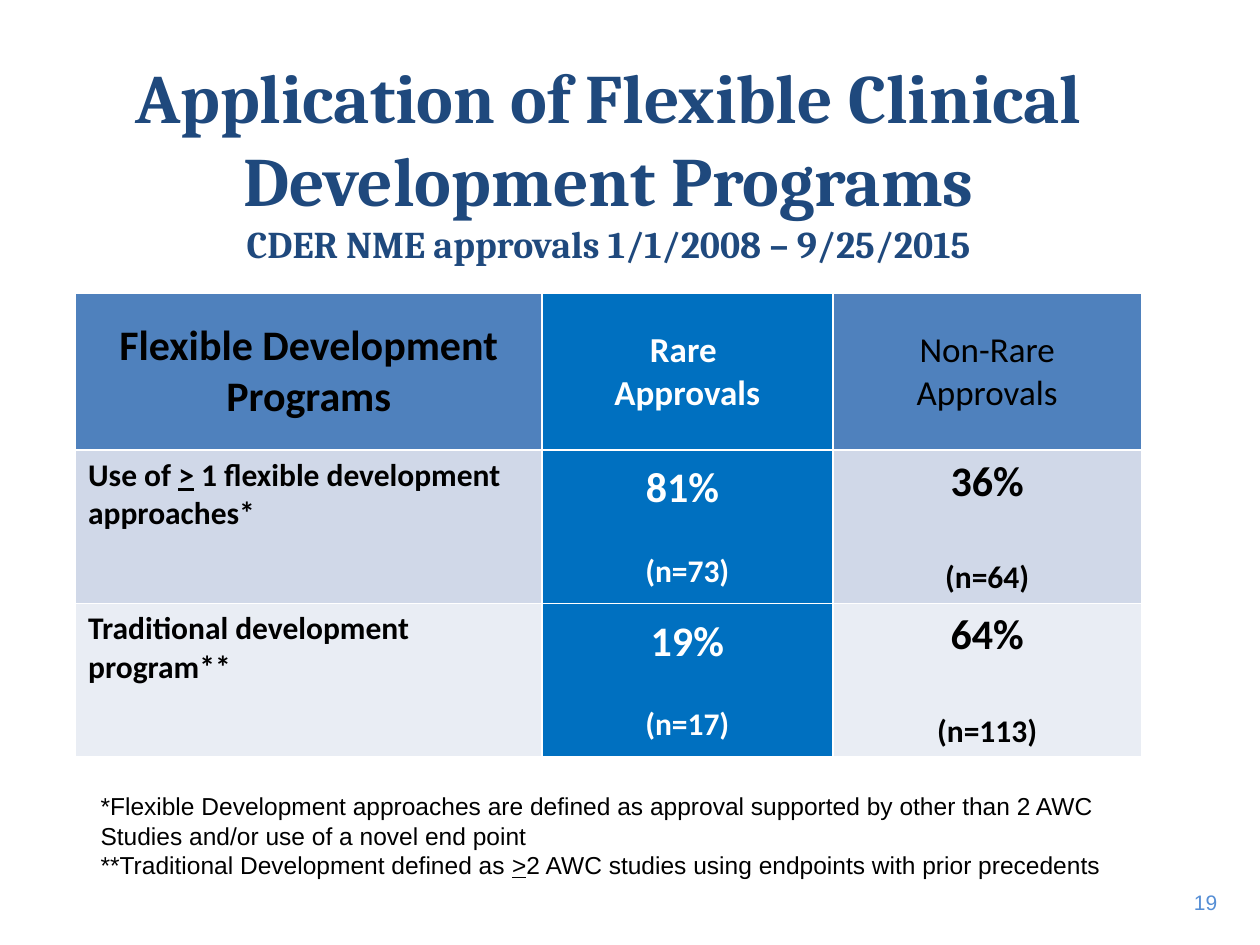
"""Build the slide on flexible clinical development programs."""
import dataclasses

import lxml.etree
import pptx
import pptx.dml.color
import pptx.enum.text
import pptx.oxml.ns
import pptx.util

Inches = pptx.util.Inches
Align = pptx.enum.text.PP_ALIGN
Anchor = pptx.enum.text.MSO_ANCHOR


@dataclasses.dataclass(frozen=True)
class Theme:
    title_font: str = "Cambria"
    table_font: str = "Calibri"
    note_font: str = "Arial"
    navy: str = "1F497D"
    black: str = "000000"
    white: str = "FFFFFF"
    header: str = "4F81BD"
    highlight: str = "0070C0"
    bands: tuple = ("D0D8E8", "E9EDF4")
    page_number: str = "558ED5"
    title_size: float = 39.6
    subtitle_size: float = 21.6
    large: float = 24
    medium: float = 20
    body: float = 18
    note: float = 14
    small: float = 12


def rgb(color):
    return pptx.dml.color.RGBColor.from_string(color)


def write(frame, text, font, size, color, bold=False, align=Align.LEFT, before=0):
    """Write one paragraph, underlining each greater-than sign."""
    paragraph = frame.paragraphs[0]
    if paragraph.runs:
        paragraph = frame.add_paragraph()
    paragraph.alignment = align
    if before:
        paragraph.space_before = pptx.util.Pt(before)
    for piece in text.replace(">", "|>|").split("|"):
        run = paragraph.add_run()
        run.text = piece
        run.font.name = font
        run.font.size = pptx.util.Pt(size)
        run.font.color.rgb = rgb(color)
        run.font.bold = bold
        run.font.underline = piece == ">"
    return paragraph


class SlideBuilder:
    """Hold the theme and the slide, and add each kind of element."""

    def __init__(self, slide, theme):
        self.slide = slide
        self.theme = theme

    def text_box(self, left, top, width, height, anchor=Anchor.TOP, wrap=True):
        shape = self.slide.shapes.add_textbox(
            Inches(left), Inches(top), Inches(width), Inches(height))
        frame = shape.text_frame
        frame.word_wrap = wrap
        frame.vertical_anchor = anchor
        return frame

    def title(self, text, subtitle):
        theme = self.theme
        frame = self.text_box(0.33, 0.91, 9, 0.72, anchor=Anchor.MIDDLE)
        for line, size in ((text, theme.title_size), (subtitle, theme.subtitle_size)):
            write(frame, line, theme.title_font, size, theme.navy,
                  bold=True, align=Align.CENTER)

    def notes(self, lines):
        frame = self.text_box(0.7, 6.23, 8.74, 0.81)
        for line in lines:
            write(frame, line, self.theme.note_font, self.theme.note, self.theme.black)

    def page_number(self, number):
        frame = self.text_box(9.35, 7.01, 0.41, 0.3, wrap=False)
        write(frame, number, self.theme.note_font, self.theme.small,
              self.theme.page_number, align=Align.RIGHT)

    def table(self, left, top, widths, heights):
        table = self.slide.shapes.add_table(
            len(heights), len(widths), Inches(left), Inches(top),
            Inches(sum(widths)), Inches(sum(heights))).table
        for column, width in zip(table.columns, widths):
            column.width = Inches(width)
        for row, height in zip(table.rows, heights):
            row.height = Inches(height)
        return table

    def cell(self, cell, fill, lines, color, bold=True, align=Align.CENTER,
             anchor=Anchor.MIDDLE):
        """Fill a cell with lines given as text, size and space before."""
        properties = cell._tc.get_or_add_tcPr()
        for side in ("lnL", "lnR", "lnT", "lnB"):
            line = lxml.etree.SubElement(
                properties, pptx.oxml.ns.qn(f"a:{side}"), w=str(pptx.util.Pt(1)))
            solid = lxml.etree.SubElement(line, pptx.oxml.ns.qn("a:solidFill"))
            lxml.etree.SubElement(
                solid, pptx.oxml.ns.qn("a:srgbClr"), val=self.theme.white)
        cell.fill.solid()
        cell.fill.fore_color.rgb = rgb(fill)
        cell.vertical_anchor = anchor
        for text, size, before in lines:
            write(cell.text_frame, text, self.theme.table_font, size, color,
                  bold=bold, align=align, before=before)

    def approvals_table(self, rows):
        theme = self.theme
        table = self.table(0.6, 2.33, (3.7, 2.31, 2.45), (1.24, 1.22, 1.22))
        self.cell(table.cell(0, 0), theme.header,
                  [("Flexible Development Programs", theme.large, 0)], theme.black)
        self.cell(table.cell(0, 1), theme.highlight,
                  [("Rare ", theme.medium, 0), ("Approvals", theme.medium, 0)],
                  theme.white)
        self.cell(table.cell(0, 2), theme.header,
                  [("Non-Rare Approvals", theme.medium, 0)], theme.black, bold=False)
        for index, (label, rare, common) in enumerate(rows, start=1):
            band = theme.bands[index - 1]
            self.cell(table.cell(index, 0), band, [(label, theme.body, 0)],
                      theme.black, align=Align.LEFT, anchor=Anchor.TOP)
            columns = ((rare, theme.highlight, theme.white, 22),
                       (common, band, theme.black, 29))
            for column, (values, fill, color, gap) in enumerate(columns, start=1):
                share, count = values
                self.cell(table.cell(index, column), fill,
                          [(share, theme.large, 0), (count, theme.body, gap)], color)


def main():
    presentation = pptx.Presentation()
    presentation.slide_width = Inches(10)
    presentation.slide_height = Inches(7.5)
    slide = presentation.slides.add_slide(presentation.slide_layouts[6])
    builder = SlideBuilder(slide, Theme())
    builder.page_number("19")
    builder.title("Application of Flexible Clinical Development Programs",
                  "CDER NME approvals 1/1/2008 – 9/25/2015")
    builder.approvals_table([
        ("Use of > 1 flexible development approaches*",
         ("81% ", "(n=73)"), ("36%", "(n=64)")),
        ("Traditional development program**",
         ("19%", "(n=17)"), ("64%", "(n=113)")),
    ])
    builder.notes([
        "*Flexible Development approaches are defined as approval supported by "
        "other than 2 AWC Studies and/or use of a novel end point",
        "**Traditional Development defined as >2 AWC studies using endpoints "
        "with prior precedents",
    ])
    presentation.save("out.pptx")


if __name__ == "__main__":
    main()
